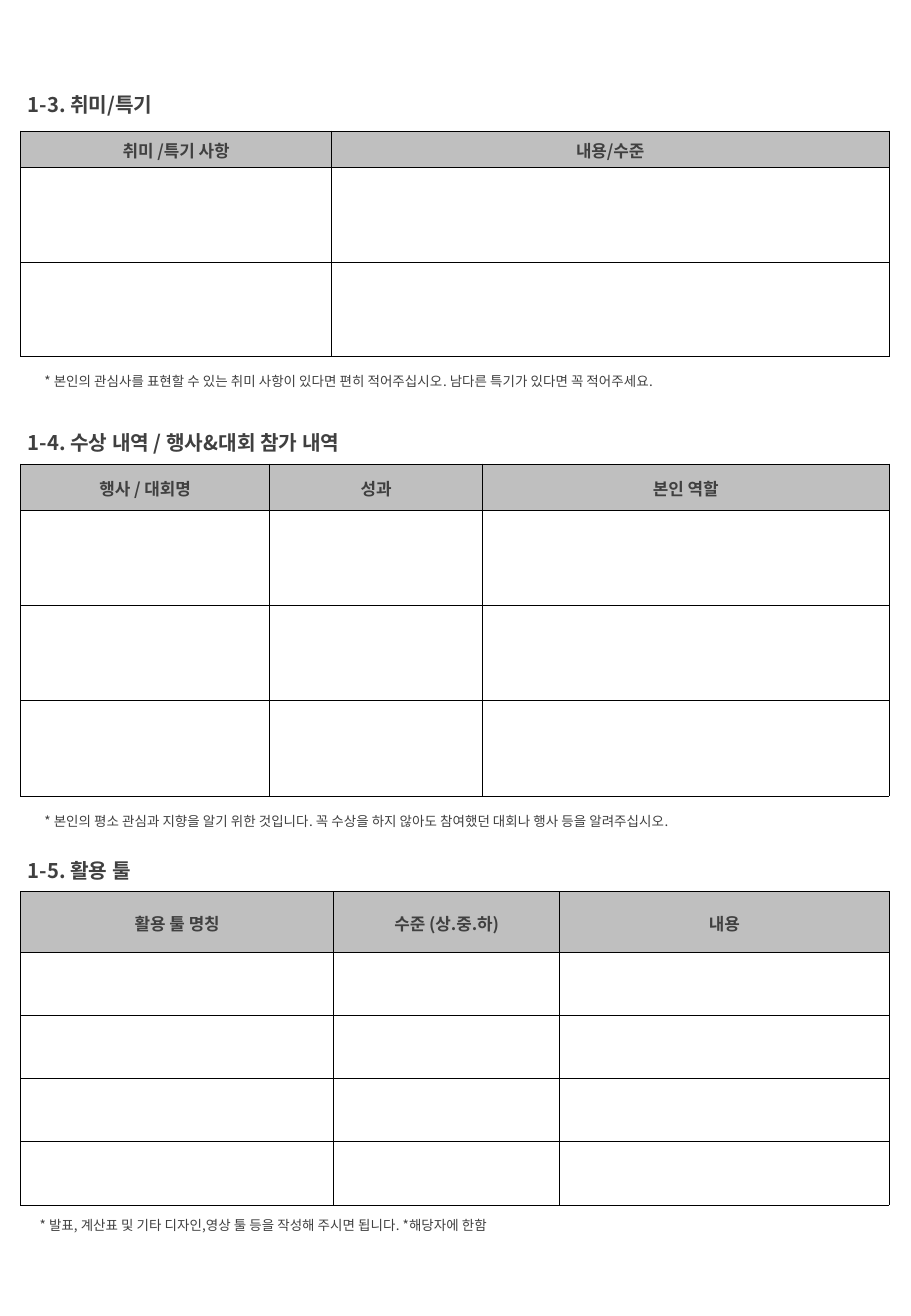
from lxml import etree
from pptx import Presentation
from pptx.dml.color import RGBColor
from pptx.enum.text import MSO_ANCHOR, MSO_AUTO_SIZE, PP_ALIGN
from pptx.oxml.ns import qn
from pptx.util import Cm, Pt

TOP, MIDDLE = MSO_ANCHOR.TOP, MSO_ANCHOR.MIDDLE
CENTER, JUSTIFY, LEFT = PP_ALIGN.CENTER, PP_ALIGN.JUSTIFY, PP_ALIGN.LEFT
GROW = MSO_AUTO_SIZE.SHAPE_TO_FIT_TEXT
FONT, INK, GREY, BLACK = "Noto Sans CJK KR", "404040", "BFBFBF", "000000"
TITLE_ONLY = 5

FRAME = {"word_wrap": True, "auto_size": GROW, "vertical_anchor": TOP,
         "margin_left": Cm(0.25), "margin_right": Cm(0.25),
         "margin_top": Cm(0.13), "margin_bottom": Cm(0.13)}
HEADER_CELL = {"vertical_anchor": MIDDLE, "margin_left": Cm(0.18),
               "margin_right": Cm(0.18), "margin_top": 0, "margin_bottom": 0}
HEADING = {"font": {"size": Pt(12), "bold": True}, "para": {"alignment": JUSTIFY}}
HEADER = {"font": {"size": Pt(10), "bold": True},
          "para": {"alignment": CENTER, "line_spacing": 1.07}}
NOTE = {"font": {"size": Pt(8), "bold": False},
        "para": {"alignment": LEFT, "line_spacing": Pt(12), "space_after": Pt(8)},
        "indent": Cm(0.25)}

SECTIONS = [
    {"heading": "1-3. 취미/특기", "box": (0.43, 2.74, 18.16),
     "heading_top": 1.8, "note_left": 0.43, "note_top": 7.59,
     "columns": {"취미 /특기 사항": 6.5, "내용/수준": 11.66},
     "rows": [0.76] + [1.98] * 2,
     "note": "* 본인의 관심사를 표현할 수 있는 취미 사항이 있다면 편히 적어주십시오. "
             "남다른 특기가 있다면 꼭 적어주세요."},
    {"heading": "1-4. 수상 내역 / 행사&대회 참가 내역", "box": (0.43, 9.7, 18.16),
     "heading_top": 8.86, "note_left": 0.43, "note_top": 16.79,
     "columns": {"행사 / 대회명": 5.21, "성과": 4.45, "본인 역할": 8.5},
     "rows": [0.97] + [1.99] * 3,
     "note": "* 본인의 평소 관심과 지향을 알기 위한 것입니다. "
             "꼭 수상을 하지 않아도 참여했던 대회나 행사 등을 알려주십시오."},
    {"heading": "1-5. 활용 툴", "box": (0.43, 18.64, 18.16),
     "heading_top": 17.81, "note_left": 0.33, "note_top": 25.22,
     "columns": {"활용 툴 명칭": 6.55, "수준 (상.중.하)": 4.72, "내용": 6.89},
     "rows": [1.27] + [1.32] * 4,
     "note": "* 발표, 계산표 및 기타 디자인,영상 툴 등을 작성해 주시면 됩니다. *해당자에 한함"},
]


def colour(target, value):
    """Give a font or fill colour format its hex colour."""
    target.rgb = RGBColor.from_string(value)


def apply(target, values):
    """Set each attribute named in the format values."""
    for name, value in values.items():
        setattr(target, name, value)


def write(frame, text, style):
    """Write one styled paragraph into a text frame."""
    para = frame.paragraphs[0]
    apply(para, style["para"])
    if "indent" in style:
        properties = para._p.get_or_add_pPr()
        properties.set("marL", "0")
        properties.set("indent", str(style["indent"]))
    span = para.add_run()
    span.text = text
    apply(span.font, {"name": FONT, **style["font"]})
    colour(span.font.color, INK)
    east_asian = etree.SubElement(span._r.get_or_add_rPr(), qn("a:ea"))
    east_asian.set("typeface", FONT)


def place_text(shape, box, text, style):
    """Move a text shape to its box and fill it."""
    apply(shape, dict(zip(("left", "top", "width", "height"), map(Cm, box))))
    apply(shape.text_frame, FRAME)
    write(shape.text_frame, text, style)


def draw_borders(cell):
    """Draw a thin black line on all four sides of a cell."""
    properties = cell._tc.get_or_add_tcPr()
    for side in ("a:lnL", "a:lnR", "a:lnT", "a:lnB"):
        line = etree.SubElement(properties, qn(side), w=str(Pt(0.5)))
        fill = etree.SubElement(line, qn("a:solidFill"))
        etree.SubElement(fill, qn("a:srgbClr"), val=BLACK)


def add_form(page, box, columns, rows):
    """Add a bordered form table with a grey header row."""
    left, top, width = box
    table = page.shapes.add_table(len(rows), len(columns), Cm(left), Cm(top),
                                  Cm(width), Cm(sum(rows))).table
    apply(table, {"first_row": False, "horz_banding": False})
    for column, size in zip(table.columns, columns.values()):
        column.width = Cm(size)
    for row, size in zip(table.rows, rows):
        row.height = Cm(size)
    for cell in table.iter_cells():
        draw_borders(cell)
        cell.fill.background()
    for cell, label in zip(table.rows[0].cells, columns):
        apply(cell, HEADER_CELL)
        cell.fill.solid()
        colour(cell.fill.fore_color, GREY)
        write(cell.text_frame, label, HEADER)


def add_section(page, section, heading):
    """Add a heading, its form table and the note below."""
    left, _, width = section["box"]
    place_text(heading, (left - 0.1, section["heading_top"], width / 2, 0.77),
               section["heading"], HEADING)
    add_form(page, section["box"], section["columns"], section["rows"])
    note = page.shapes.add_textbox(0, 0, 0, 0)
    place_text(note, (section["note_left"], section["note_top"], width, 0.64),
               section["note"], NOTE)


def main():
    """Build the application form page."""
    deck = Presentation()
    deck.slide_width, deck.slide_height = Cm(19.05), Cm(27.51)
    page = deck.slides.add_slide(deck.slide_layouts[TITLE_ONLY])
    add_section(page, SECTIONS[0], page.shapes.title)
    for section in SECTIONS[1:]:
        add_section(page, section, page.shapes.add_textbox(0, 0, 0, 0))
    deck.save("out.pptx")


if __name__ == "__main__":
    main()
